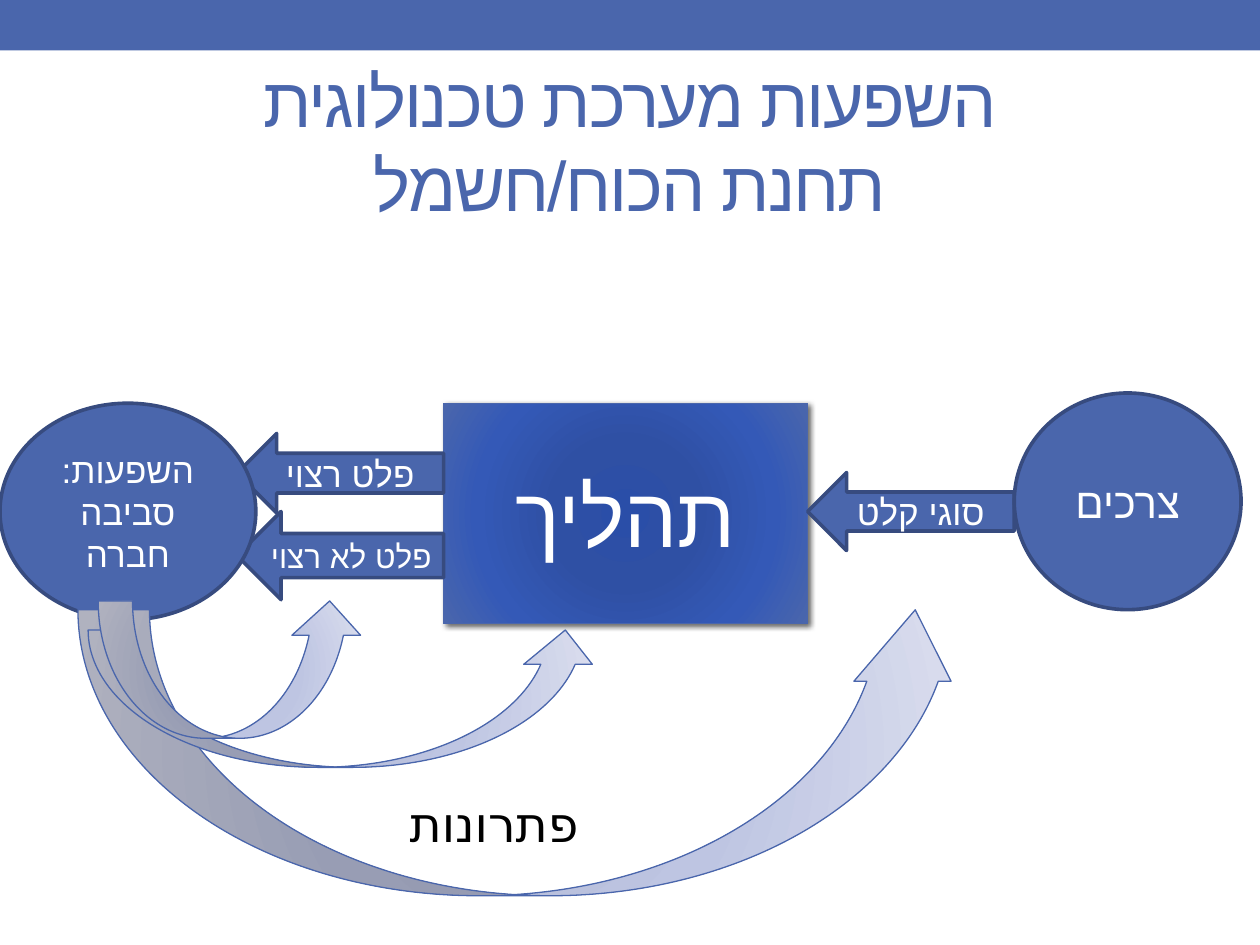
from lxml.etree import SubElement
from pptx import Presentation
from pptx.dml.color import RGBColor
from pptx.enum.shapes import MSO_SHAPE
from pptx.enum.text import MSO_ANCHOR, PP_ALIGN
from pptx.oxml.ns import qn
from pptx.util import Pt

COLORS = {
    "blue": "4A66AC", "edge": "374B7F", "white": "FFFFFF", "black": "000000",
}
PROCESS_STOPS = [(0, "2A4EA8"), (34, "2F50A4"), (70, "3459B7"), (100, "4A66AC")]
FEEDBACK_STOPS = [(0, "B0B7D2"), (45, "BEC5E2"), (100, "DCDFEF")]


def rgb(name):
    return RGBColor.from_string(COLORS[name])


def place(box, left, top, width, height):
    """Turn a position inside a box into slide lengths."""
    return Pt(box[0] + left), Pt(box[1] + top), Pt(width), Pt(height)


def write(shape, lines, size, color="white", font="Arial",
          align=PP_ALIGN.CENTER, spacing=None, **frame_format):
    """Fill a shape with right-to-left paragraphs."""
    frame = shape.text_frame
    values = {"word_wrap": True, "vertical_anchor": MSO_ANCHOR.MIDDLE, **frame_format}
    for name, value in values.items():
        setattr(frame, name, value)
    frame.text = "\n".join(lines)
    for paragraph in frame.paragraphs:
        paragraph.alignment = align
        paragraph._p.get_or_add_pPr().set("rtl", "1")
        for run in paragraph.runs:
            for name, value in {"size": Pt(size), "name": font}.items():
                setattr(run.font, name, value)
            run.font.color.rgb = rgb(color)
            properties = run._r.get_or_add_rPr()
            SubElement(properties, qn("a:cs"), typeface=font)
            if spacing:
                properties.set("spc", str(spacing * 100))


def add_part(shapes, kind, position, line="edge", width=2.08):
    shape = shapes.add_shape(kind, *position)
    shape.shadow.inherit = False
    shape.fill.solid()
    shape.fill.fore_color.rgb = rgb("blue")
    if line:
        shape.line.color.rgb = rgb(line)
        shape.line.width = Pt(width)
    else:
        shape.line.fill.background()
    return shape


def fill_radial(shape, stops):
    shape.fill.gradient()
    gradient = shape._element.spPr.find(qn("a:gradFill"))
    for child in list(gradient):
        gradient.remove(child)
    stop_list = SubElement(gradient, qn("a:gsLst"))
    for percent, color in stops:
        stop = SubElement(stop_list, qn("a:gs"), pos=str(percent * 1000))
        SubElement(stop, qn("a:srgbClr"), val=color)
    circle = SubElement(gradient, qn("a:path"), path="circle")
    SubElement(circle, qn("a:fillToRect"), {side: "100000" for side in "ltrb"})


def add_shadow(shape, blur, distance, angle, opacity):
    effects = shape._element.spPr.find(qn("a:effectLst"))
    shadow = SubElement(effects, qn("a:outerShdw"), blurRad=str(Pt(blur)),
                        dist=str(Pt(distance)), dir=str(angle * 60000),
                        algn="tl", rotWithShape="0")
    color = SubElement(shadow, qn("a:srgbClr"), val=COLORS["black"])
    SubElement(color, qn("a:alpha"), val=str(opacity * 1000))


def add_header(slide, box):
    # Top band
    add_part(slide.shapes, MSO_SHAPE.RECTANGLE, place(box, 0, 0, box[2], 28.8), line=None)
    # Title, two lines in one paragraph
    title = slide.shapes.add_textbox(*place(box, 36, 41.8, box[2] - 72, 77.8))
    write(title, ["השפעות מערכת טכנולוגית\vתחנת הכוח/חשמל"], 40, "blue", spacing=-1)


def add_system(slide, box):
    # Process
    process = add_part(slide.shapes, MSO_SHAPE.RECTANGLE,
                       place(box, 253.4, 5.8, 208.1, 126), "blue", 0.75)
    fill_radial(process, PROCESS_STOPS)
    add_shadow(process, blur=3, distance=2, angle=45, opacity=60)
    write(process, ["תהליך"], 48, word_wrap=False)

    # Input and output arrows
    outputs = slide.shapes.add_group_shape().shapes
    arrows = [
        (slide.shapes, "סוגי קלט", 20, 461.5, 45.4, 44.6),
        (outputs, "פלט לא רצוי", 18, 135.4, 67.7, 50.4),
        (outputs, "פלט רצוי", 20, 135.4, 23.1, 45.4),
    ]
    for shapes, text, size, left, top, height in arrows:
        arrow = add_part(shapes, MSO_SHAPE.LEFT_ARROW,
                         place(box, left, top, 118.1, height))
        write(arrow, [text], size, margin_left=0, margin_right=0)

    # Needs and effects
    ellipses = [
        (["צרכים"], 24, 579.6, 0, 129.6),
        (["השפעות:", "סביבה", "חברה"], 20, 0, 5.8, 146.2),
    ]
    for lines, size, left, top, width in ellipses:
        ellipse = add_part(slide.shapes, MSO_SHAPE.OVAL,
                           place(box, left, top, width, 123.8))
        write(ellipse, lines, size)


def add_feedback(slide, box):
    # Curved arrows, longest first
    arrows = [
        (0, 5.1, 506.2, 163.4, 0.34),
        (5.8, 16.6, 292.3, 78.5, 0.5),
        (11.5, 0, 151.9, 78.5, 0.5),
    ]
    for left, top, width, height, head in arrows:
        arrow = add_part(slide.shapes, MSO_SHAPE.CURVED_UP_ARROW,
                         place(box, left, top, width, height), "blue", 0.75)
        arrow.adjustments[1] = head
        fill_radial(arrow, FEEDBACK_STOPS)
    # Label
    label = slide.shapes.add_textbox(*place(box, 101.5, 106.6, 191.5, 41))
    write(label, ["פתרונות"], 28, "black", "DejaVu Sans", PP_ALIGN.RIGHT,
          vertical_anchor=MSO_ANCHOR.TOP)


def main():
    presentation = Presentation()
    presentation.slide_width, presentation.slide_height = Pt(720), Pt(540)
    slide = presentation.slides.add_slide(presentation.slide_layouts[6])
    add_header(slide, (0, 0, 720, 120))
    add_system(slide, (0, 224.6, 709.2, 131.8))
    add_feedback(slide, (44.6, 343.4, 506.2, 168.5))
    presentation.save("out.pptx")


if __name__ == "__main__":
    main()
